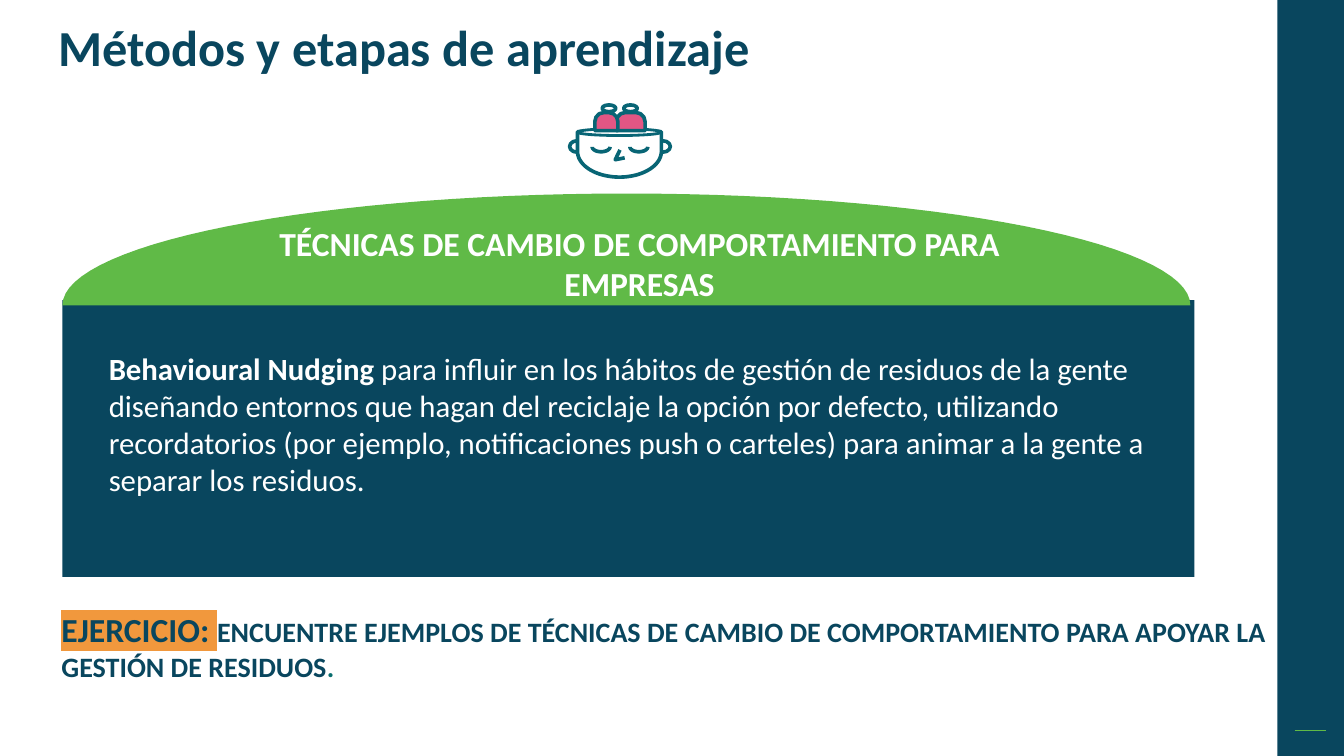
"""Build the slide on learning methods and behaviour-change techniques."""
import math
from dataclasses import dataclass

from lxml import etree
from pptx import Presentation, util as u
from pptx.dml.color import RGBColor
from pptx.enum import shapes as kinds, text as t
from pptx.oxml.ns import qn

NAVY = RGBColor(0x09, 0x46, 0x5E)
GREEN = RGBColor(0x60, 0xBA, 0x47)
WHITE = RGBColor(0xFF, 0xFF, 0xFF)
PINK = RGBColor(0xE2, 0x56, 0x84)
TEAL = RGBColor(0x08, 0x65, 0x75)
STOP = RGBColor(0x08, 0x6D, 0x6E)
ORANGE = RGBColor(0xF1, 0x98, 0x3D)
STROKE = 2.6


@dataclass
class Box:
    """A region whose contents are given in percent of its size."""
    left: float
    top: float
    width: float
    height: float

    def point(self, x, y):
        """Return the position at the given percentages."""
        return (round(self.left + self.width * x / 100),
                round(self.top + self.height * y / 100))

    def inner(self, x, y, width, height):
        """Return a smaller region inside this one."""
        return Box(*self.point(x, y), round(self.width * width / 100),
                   round(self.height * height / 100))

    def frame(self):
        """Return left, top, width and height."""
        return self.left, self.top, self.width, self.height


def paint(shape, fill=None, line=None, weight=STROKE):
    """Set the fill and outline of a shape and drop its shadow."""
    shape.shadow.inherit = False
    if fill is None:
        shape.fill.background()
    else:
        shape.fill.solid()
        shape.fill.fore_color.rgb = fill
    if line is None:
        shape.line.fill.background()
    else:
        shape.line.color.rgb = line
        shape.line.width = u.Pt(weight)
    return shape


def add_preset(page, kind, box, **look):
    """Add a painted preset shape."""
    return paint(page.shapes.add_shape(kind, *box.frame()), **look)


def add_outline(page, box, points, close=True, **look):
    """Add a painted freeform through percentage points of the box."""
    first, *rest = [box.point(x, y) for x, y in points]
    builder = page.shapes.build_freeform(*first)
    builder.add_line_segments(rest, close=close)
    return paint(builder.convert_to_shape(), **look)


def arc(x, y, across, down, start, end, steps=60):
    """Return points along an elliptical arc, with angles in degrees."""
    angles = [math.radians(start + (end - start) * i / steps) for i in range(steps + 1)]
    return [(x + across * math.cos(a), y + down * math.sin(a)) for a in angles]


def add_text(page, box, spans, align=t.PP_ALIGN.LEFT, spacing=None):
    """Add a wrapped one-paragraph text box made of formatted spans."""
    frame = page.shapes.add_textbox(*box.frame()).text_frame
    frame.word_wrap = True
    para = frame.paragraphs[0]
    para.alignment = align
    if spacing:
        para.line_spacing = spacing
    for words, style in spans:
        add_span(para, words, **style)


def add_span(para, words, size, color, bold=True, highlight=None):
    """Add one formatted run to a paragraph."""
    span = para.add_run()
    span.text = words
    span.font.size = u.Pt(size)
    span.font.bold = bold
    span.font.color.rgb = color
    if highlight is not None:
        mark = etree.SubElement(span.font._element, qn("a:highlight"))
        etree.SubElement(mark, qn("a:srgbClr"), val=str(highlight))
    span.font.name = "Calibri"


def draw_sidebar(page, box):
    """Draw the right-hand band with its short rule."""
    add_preset(page, kinds.MSO_SHAPE.RECTANGLE, box, fill=NAVY)
    rule = page.shapes.add_connector(kinds.MSO_CONNECTOR.STRAIGHT,
                                     *box.point(25.8, 96.67), *box.point(72.7, 96.67))
    rule.line.color.rgb = GREEN
    rule.line.width = u.Pt(1)
    etree.SubElement(rule._element.spPr, qn("a:effectLst"))


def draw_title(page, box):
    """Write the slide title."""
    add_text(page, box, [("Métodos y etapas de aprendizaje", dict(size=36, color=NAVY))],
             spacing=0.9)


def draw_lesson(page, box):
    """Draw the panel with its domed heading and explanation."""
    add_preset(page, kinds.MSO_SHAPE.RECTANGLE, box.inner(0, 27.82, 100, 72.18), fill=NAVY)
    add_outline(page, box.inner(0, 0, 99.64, 29.13), arc(50, 100, 50, 100, 180, 360),
                fill=GREEN)
    add_text(page, box.inner(13.89, 6.3, 74.18, 13.12),
             [("TÉCNICAS DE CAMBIO DE COMPORTAMIENTO PARA EMPRESAS",
               dict(size=24, color=WHITE))], align=t.PP_ALIGN.CENTER)
    add_text(page, box.inner(3.21, 39.37, 95.28, 48.56), [
        ("Behavioural Nudging ", dict(size=22, color=WHITE)),
        ("para influir en los hábitos de gestión de residuos de la gente diseñando "
         "entornos que hagan del reciclaje la opción por defecto, utilizando "
         "recordatorios (por ejemplo, notificaciones push o carteles) para animar a "
         "la gente a separar los residuos.", dict(size=22, color=WHITE, bold=False))])


def draw_mind(page, box):
    """Draw the open head with closed eyes and two pink lobes."""
    oval = kinds.MSO_SHAPE.OVAL
    for x in (2, 84):
        add_preset(page, oval, box.inner(x, 49, 14, 15), fill=WHITE, line=TEAL)
    jaw = arc(49.5, 63, 40, 34, 0, 180)
    add_outline(page, box, [(89.5, 37), *jaw, (9.5, 37)], fill=WHITE, line=TEAL)
    add_preset(page, oval, box.inner(9.5, 33, 80, 9), fill=WHITE, line=TEAL, weight=2)
    for x, bump, width in ((46.5, 53.5, 27.5), (26, 33, 22)):
        add_preset(page, oval, box.inner(bump, 1.5, 13, 9), fill=WHITE, line=TEAL)
        lobe = add_preset(page, kinds.MSO_SHAPE.ROUND_2_SAME_RECTANGLE,
                          box.inner(x, 11.5, width, 24), fill=PINK, line=TEAL)
        lobe.adjustments[0] = 0.5
    for x in (32, 68):
        add_outline(page, box, arc(x, 57, 8.5, 6.5, 0, 180), close=False, line=TEAL)
    add_outline(page, box, [(50, 61), (45.5, 74), (54.5, 71.5)], close=False, line=TEAL)


def draw_exercise(page, box):
    """Write the exercise with its highlighted label."""
    add_text(page, box, [
        ("EJERCICIO: ", dict(size=24, color=NAVY, highlight=ORANGE)),
        ("ENCUENTRE EJEMPLOS DE TÉCNICAS DE CAMBIO DE COMPORTAMIENTO PARA APOYAR LA "
         "GESTIÓN DE RESIDUOS", dict(size=20, color=NAVY)),
        (".", dict(size=20, color=STOP))])


def main():
    """Build and save the deck."""
    deck = Presentation()
    deck.slide_width, deck.slide_height = u.Inches(13.33), u.Inches(7.5)
    page = deck.slides.add_slide(deck.slide_layouts[6])
    whole = Box(0, 0, deck.slide_width, deck.slide_height)
    draw_sidebar(page, whole.inner(95.05, 0, 4.95, 100))
    draw_title(page, whole.inner(3.6, 2.4, 61.13, 7.33))
    draw_lesson(page, whole.inner(4.65, 25.6, 84.22, 50.73))
    draw_mind(page, whole.inner(42.23, 13.73, 7.8, 10))
    draw_exercise(page, whole.inner(3.83, 79.87, 92.4, 11.2))
    deck.save("out.pptx")


if __name__ == "__main__":
    main()
